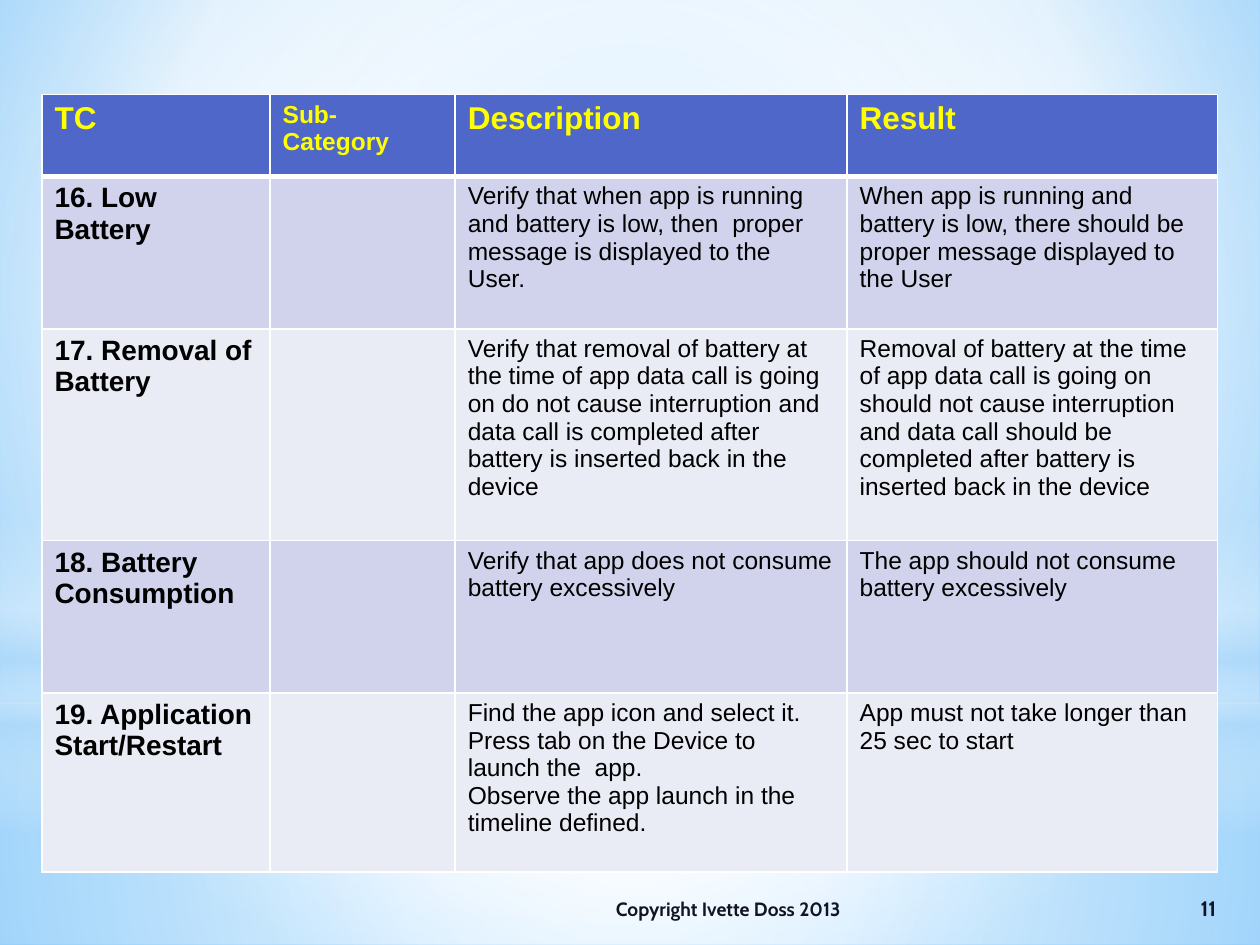
from dataclasses import dataclass

from lxml import etree
from pptx import Presentation
from pptx.dml.color import RGBColor
from pptx.enum import shapes, text
from pptx.oxml import ns
from pptx.util import Pt


@dataclass(frozen=True)
class Theme:
    """Colours, fonts and type sizes of the slide."""
    header: str = "4E67C8"
    header_text: str = "FFFF00"
    bands: tuple = ("D0D3EB", "E9EBF5")
    body_text: str = "000000"
    border: str = "FFFFFF"
    footer_text: str = "111422"
    body_font: str = "Arial"
    footer_font: str = "Cabin"
    header_size: int = 18
    case_size: int = 16
    body_size: int = 14
    footer_size: int = 11
    number_size: int = 12
    sky: tuple = ((0, "9ED5FF"), (60, "FFFFFF"), (100, "5BB9FF"))
    ground: tuple = ((0, "FFFFFF", 91), (37, "FFFFFF", 76), (100, "B4DCFA", 79))
    air: tuple = ((0, "FFFFFF", 89), (48, "FFFFFF", 62), (100, "B4DCFA", 79))
    horizon: tuple = ((0, "FFFFFF", 0), (29, "FFFFFF", 30), (45, "B4DCFA", 40),
                      (55, "FFFFFF", 26), (65, "B4DCFA", 60), (100, "FFFFFF", 0))
    glow: tuple = ((0, "FFFFFF"), (56, "FFFFFF", 0))


THEME = Theme()
CENTRE = (50, 50, 50, 50)
COLUMNS = (130.32, 105.84, 223.92, 211.68)
ROWS = (46.8, 87.12, 120.96, 87.12, 102.24)
HEADERS = ("TC", "Sub-Category", "Description", "Result")
CASES = (
    ("16. Low Battery", "",
     "Verify that when app is running and battery is low, then  proper message is displayed "
     "to the User.",
     "When app is running and battery is low, there should be proper message displayed to the User"),
    ("17. Removal of Battery", "",
     "Verify that removal of battery at the time of app data call is going on do not cause "
     "interruption and data call is completed after battery is inserted back in the device",
     "Removal of battery at the time of app data call is going on should not cause interruption "
     "and data call should be completed after battery is inserted back in the device"),
    ("18. Battery Consumption", "",
     "Verify that app does not consume battery excessively",
     "The app should not consume battery excessively"),
    ("19. Application Start/Restart", "",
     "Find the app icon and select it.\nPress tab on the Device to launch the  app.\n"
     "Observe the app launch in the timeline defined.",
     "App must not take longer than 25 sec to start"),
)


def add(parent, tag, **attrs):
    """Append a DrawingML element and return it."""
    return etree.SubElement(parent, ns.qn(tag), {k: str(v) for k, v in attrs.items()})


def set_gradient(props, stops, focus=None):
    """Replace the solid fill in props by a circular or vertical gradient."""
    solid = props.find(ns.qn("a:solidFill"))
    grad = etree.Element(ns.qn("a:gradFill"), rotWithShape="1")
    gs_list = add(grad, "a:gsLst")
    for position, colour, *alpha in stops:
        clr = add(add(gs_list, "a:gs", pos=position * 1000), "a:srgbClr", val=colour)
        if alpha:
            add(clr, "a:alpha", val=alpha[0] * 1000)
    if focus:
        sides = {side: value * 1000 for side, value in zip("ltrb", focus)}
        add(add(grad, "a:path", path="circle"), "a:fillToRect", **sides)
    else:
        add(grad, "a:lin", ang=90 * 60000, scaled=0)
    props.replace(solid, grad)


def format_text(tf, font, size, colour, bold):
    """Give every paragraph of a text frame the same font."""
    for p in tf.paragraphs:
        f = p.font
        f.name, f.size, f.bold = font, Pt(size), bold
        f.color.rgb = RGBColor.from_string(colour)


def set_borders(cell, **widths):
    """Draw the four borders of a cell, one point wide unless stated."""
    tc_pr = cell._tc.get_or_add_tcPr()
    for i, side in enumerate("LRTB"):
        line = etree.Element(ns.qn(f"a:ln{side}"), w=str(Pt(widths.get(side, 1))))
        add(add(line, "a:solidFill"), "a:srgbClr", val=THEME.border)
        tc_pr.insert(i, line)


def add_backdrop(slide, left, top, width, height):
    """Paint the sky and its layers of light."""
    slide.background.fill.solid()
    set_gradient(slide.element.xpath(".//p:bgPr")[0], THEME.sky, (20, 10, 20, 60))
    kinds = shapes.MSO_SHAPE
    split = 401.76
    layers = (
        (kinds.RECTANGLE, split, height - split, THEME.ground, CENTRE),
        (kinds.RECTANGLE, 0, split, THEME.air, CENTRE),
        (kinds.RECTANGLE, 296.64, 180, THEME.horizon, None),
        (kinds.OVAL, 126, split, THEME.glow, CENTRE),
    )
    for kind, y, h, stops, focus in layers:
        s = slide.shapes.add_shape(kind, Pt(left), Pt(top + y), Pt(width), Pt(h))
        s.shadow.inherit = False
        s.line.fill.background()
        s.fill.solid()
        set_gradient(s.element.spPr, stops, focus)


def add_cases(slide, left, top, width, height):
    """Place the table of test cases."""
    table = slide.shapes.add_table(len(ROWS), len(COLUMNS), Pt(left), Pt(top),
                                   Pt(width), Pt(height)).table
    table.horz_banding = False
    for column, w in zip(table.columns, COLUMNS):
        column.width = Pt(w)
    for row, h in zip(table.rows, ROWS):
        row.height = Pt(h)
    for r, values in enumerate((HEADERS, *CASES)):
        for c, value in enumerate(values):
            cell = table.cell(r, c)
            cell.text = value
            if r == 0:
                fill, colour = THEME.header, THEME.header_text
                size = THEME.body_size if c == 1 else THEME.header_size
            else:
                fill, colour = THEME.bands[(r - 1) % 2], THEME.body_text
                size = THEME.case_size if c == 0 else THEME.body_size
            format_text(cell.text_frame, THEME.body_font, size, colour, r == 0 or c == 0)
            cell.fill.solid()
            cell.fill.fore_color.rgb = RGBColor.from_string(fill)
            set_borders(cell, T=3 if r == 1 else 1, B=3 if r == 0 else 1)


def add_footer(slide, left, top, width, height):
    """Place the copyright line and the page number side by side."""
    number_width = 37.44
    notice_width = width - number_width
    parts = (
        ("Copyright Ivette Doss 2013", left, notice_width, THEME.footer_size, text.PP_ALIGN.LEFT),
        ("11", left + notice_width, number_width, THEME.number_size, text.PP_ALIGN.CENTER),
    )
    for words, x, w, size, align in parts:
        tf = slide.shapes.add_textbox(Pt(x), Pt(top), Pt(w), Pt(height)).text_frame
        tf.word_wrap = True
        tf.vertical_anchor = text.MSO_ANCHOR.MIDDLE
        tf.text = words
        tf.paragraphs[0].alignment = align
        format_text(tf, THEME.footer_font, size, THEME.footer_text, True)


def main():
    """Build the slide and save it."""
    prs = Presentation()
    prs.slide_width, prs.slide_height = Pt(720), Pt(540)
    slide = prs.slides.add_slide(prs.slide_layouts[6])
    add_backdrop(slide, 0, 0, 720, 540)
    add_cases(slide, 24, 54, sum(COLUMNS), sum(ROWS))
    add_footer(slide, 344.88, 504.72, 364.32, 28.8)
    prs.save("out.pptx")


if __name__ == "__main__":
    main()
